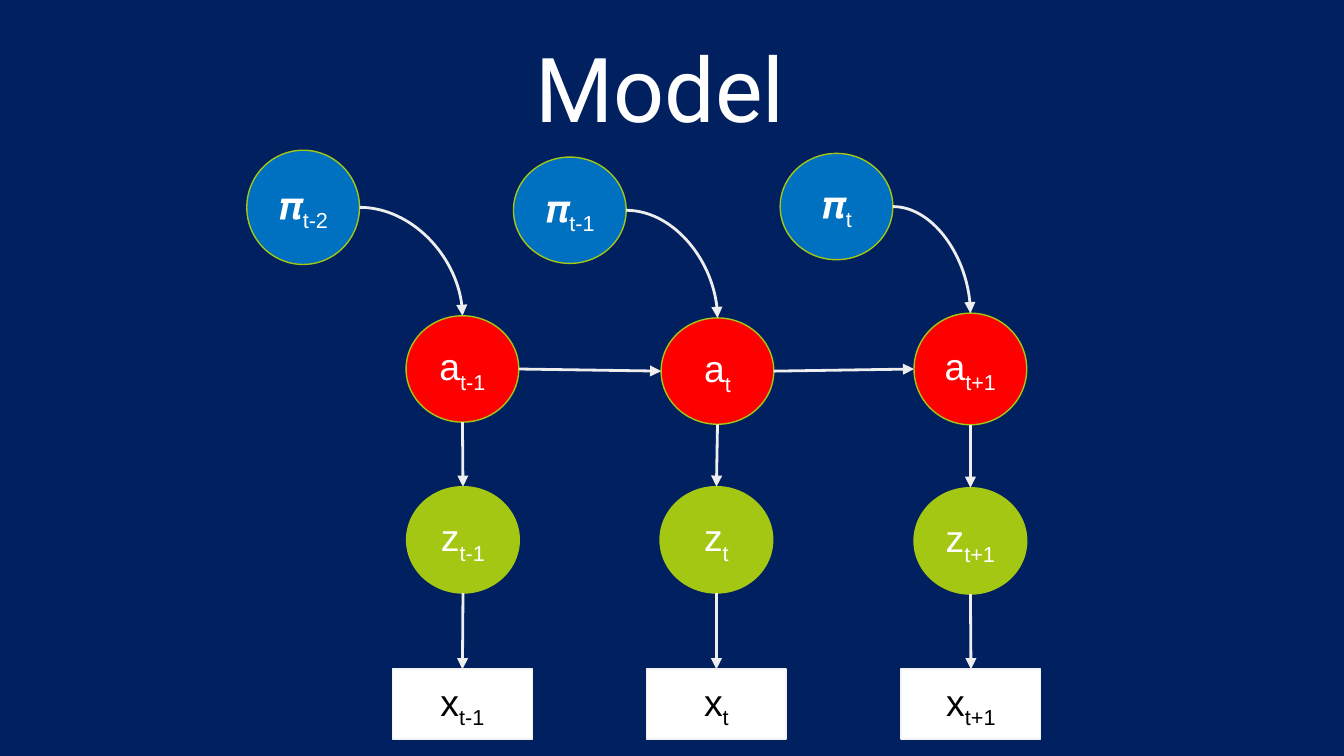
from dataclasses import dataclass
from lxml.etree import SubElement as Sub
from pptx import Presentation as Deck
from pptx.dml.color import RGBColor as Rgb
from pptx.enum.shapes import MSO_CONNECTOR as Link, MSO_SHAPE as Form
from pptx.enum.text import MSO_ANCHOR as Anchor, PP_ALIGN as Align
from pptx.oxml.ns import qn
from pptx.util import Cm, Pt


@dataclass(frozen=True)
class Theme:
    back: str = "002060"
    white: str = "FFFFFF"
    black: str = "000000"
    blue: str = "0070C0"
    red: str = "FF0000"
    green: str = "A4C713"
    edge: str = "F3F3F3"
    wire: str = "EEEEEE"
    head: str = "Roboto"
    body: str = "Arial"
    large: float = 48
    small: float = 20
    thin: float = 0.75
    thick: float = 1.5


@dataclass(frozen=True)
class Kind:
    sign: str
    form: Form
    fill: str
    line: str
    ink: str
    wide: float


@dataclass(frozen=True)
class Node:
    kind: Kind
    sub: str
    mid: float
    top: float
    high: float = 2.01

    @property
    def left(self) -> float:
        return self.mid - self.kind.wide / 2

    @property
    def right(self) -> float:
        return self.mid + self.kind.wide / 2

    @property
    def base(self) -> float:
        return self.top + self.high

    @property
    def level(self) -> float:
        return self.top + self.high / 2


LOOK = Theme()
PRIOR = Kind("𝝅", Form.OVAL, LOOK.blue, LOOK.green, LOOK.white, 2.13)
ACT = Kind("a", Form.OVAL, LOOK.red, LOOK.green, LOOK.white, 2.13)
STATE = Kind("z", Form.OVAL, LOOK.green, LOOK.green, LOOK.white, 2.13)
DATA = Kind("x", Form.RECTANGLE, LOOK.white, LOOK.edge, LOOK.black, 2.64)

PRIORS = [Node(PRIOR, "t-2", 5.73, 2.84, 2.16), Node(PRIOR, "t-1", 10.77, 2.97),
          Node(PRIOR, "t", 15.81, 2.9)]
ACTS = [Node(ACT, "t-1", 8.74, 5.97), Node(ACT, "t", 13.56, 6.01),
        Node(ACT, "t+1", 18.34, 5.92, 2.11)]
STATES = [Node(STATE, "t-1", 8.75, 9.2), Node(STATE, "t", 13.54, 9.2),
          Node(STATE, "t+1", 18.34, 9.22)]
ITEMS = [Node(DATA, "t-1", 8.74, 12.65, 1.32), Node(DATA, "t", 13.54, 12.65, 1.32),
         Node(DATA, "t+1", 18.35, 12.65, 1.32)]


def apply(thing, form: dict) -> None:
    for name, value in form.items():
        setattr(thing, name, value)


def write(shape, parts: list[str], font: str, size: float, ink: str, pad: float) -> None:
    frame = shape.text_frame
    sides = ("left", "right", "top", "bottom")
    apply(frame, {"word_wrap": True, "vertical_anchor": Anchor.MIDDLE,
                  **{f"margin_{side}": Cm(pad) for side in sides}})
    para = frame.paragraphs[0]
    para.alignment = Align.CENTER
    for spot, part in enumerate(parts):
        run = para.add_run()
        run.text = part
        apply(run.font, {"name": font, "size": Pt(size)})
        run.font.color.rgb = Rgb.from_string(ink)
        if spot:
            run._r.get_or_add_rPr().set("baseline", "-25000")


def draw(slide, node: Node) -> None:
    kind = node.kind
    shape = slide.shapes.add_shape(kind.form, Cm(node.left), Cm(node.top),
                                   Cm(kind.wide), Cm(node.high))
    shape.shadow.inherit = False
    shape.fill.solid()
    shape.fill.fore_color.rgb = Rgb.from_string(kind.fill)
    shape.line.color.rgb = Rgb.from_string(kind.line)
    shape.line.width = Pt(LOOK.thin)
    write(shape, [kind.sign, node.sub], LOOK.body, LOOK.small, kind.ink, 0.18)


def join(slide, start: tuple[float, float], end: tuple[float, float],
         bend: bool = False) -> None:
    kind = Link.CURVE if bend else Link.STRAIGHT
    wire = slide.shapes.add_connector(kind, *map(Cm, start + end))
    wire.line.color.rgb = Rgb.from_string(LOOK.wire)
    wire.line.width = Pt(LOOK.thick)
    Sub(wire.line._get_or_add_ln(), qn("a:tailEnd"), type="triangle")
    props = wire._element.spPr
    Sub(props, qn("a:effectLst"))
    if bend:
        props.find(qn("a:prstGeom")).set("prst", "curvedConnector2")


def main() -> None:
    deck = Deck()
    apply(deck, {"slide_width": Cm(25.4), "slide_height": Cm(14.29)})
    slide = deck.slides.add_slide(deck.slide_layouts[6])
    slide.background.fill.solid()
    slide.background.fill.fore_color.rgb = Rgb.from_string(LOOK.back)
    title = slide.shapes.add_textbox(Cm(0.64), Cm(0.46), Cm(23.67), Cm(2.36))
    write(title, ["Model"], LOOK.head, LOOK.large, LOOK.white, 0.25)

    for node in PRIORS + ACTS + STATES + ITEMS:
        draw(slide, node)
    for prior, act in zip(PRIORS, ACTS):
        join(slide, (prior.right, prior.level), (act.mid, act.top), True)
    for one, two in zip(ACTS, ACTS[1:]):
        join(slide, (one.right, one.level), (two.left, two.level))
    for high, low in zip(ACTS + STATES, STATES + ITEMS):
        join(slide, (high.mid, high.base), (low.mid, low.top))
    deck.save("out.pptx")


if __name__ == "__main__":
    main()
